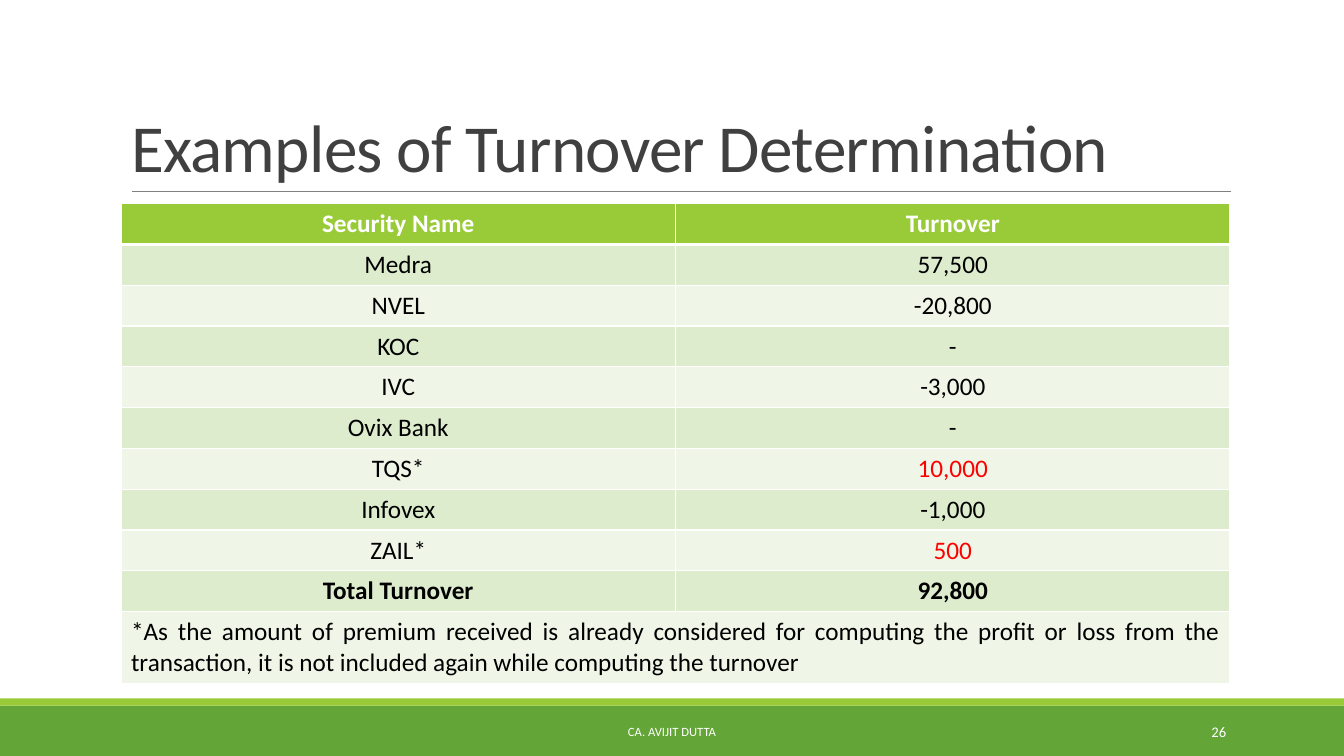
from lxml import etree
from pptx import Presentation
from pptx.dml.color import RGBColor
from pptx.enum.shapes import MSO_CONNECTOR, MSO_SHAPE
from pptx.enum.text import MSO_ANCHOR, MSO_AUTO_SIZE, PP_ALIGN
from pptx.oxml.ns import qn
from pptx.util import Inches, Pt

LEFT, CENTER, RIGHT, JUSTIFY = PP_ALIGN.LEFT, PP_ALIGN.CENTER, PP_ALIGN.RIGHT, PP_ALIGN.JUSTIFY
MIDDLE, BOTTOM = MSO_ANCHOR.MIDDLE, MSO_ANCHOR.BOTTOM
NO_AUTOFIT = MSO_AUTO_SIZE.NONE
RECTANGLE = MSO_SHAPE.RECTANGLE
STRAIGHT = MSO_CONNECTOR.STRAIGHT

GREEN = RGBColor(0x63, 0xA5, 0x37)
LIME = RGBColor(0x99, 0xCB, 0x38)
BAND_DARK = RGBColor(0xDE, 0xEC, 0xCE)
BAND_LIGHT = RGBColor(0xEF, 0xF6, 0xE8)
GRAY = RGBColor(0x80, 0x80, 0x80)
CHARCOAL = RGBColor(0x40, 0x40, 0x40)
WHITE = RGBColor(0xFF, 0xFF, 0xFF)
BLACK = RGBColor(0, 0, 0)
RED = RGBColor(0xFF, 0, 0)

FONT = "Calibri"
SLIDE_WIDTH = 13.33
ROW_HEIGHT, NOTE_HEIGHT = 0.405, 0.71

TURNOVERS = [
    ("Security Name", "Turnover"),
    ("Medra", "57,500"),
    ("NVEL", "-20,800"),
    ("KOC", "-"),
    ("IVC", "-3,000"),
    ("Ovix Bank", "-"),
    ("TQS*", "10,000"),
    ("Infovex", "-1,000"),
    ("ZAIL*", "500"),
    ("Total Turnover", "92,800"),
]
NOTE = (
    "*As the amount of premium received is already considered for computing the profit "
    "or loss from the transaction, it is not included again while computing the turnover"
)


def write(frame, text, size, color, align, bold=False):
    frame.word_wrap = True
    para = frame.paragraphs[0]
    para.text = text
    para.alignment = align
    font = para.runs[0].font
    font.name, font.size, font.bold = FONT, Pt(size), bold
    font.color.rgb = color
    return para


def add_band(slide, top, height, color):
    band = slide.shapes.add_shape(
        RECTANGLE, 0, Inches(top), Inches(SLIDE_WIDTH), Inches(height))
    band.shadow.inherit = False
    band.fill.solid()
    band.fill.fore_color.rgb = color
    band.line.fill.background()


def add_title_rule(slide):
    rule = slide.shapes.add_connector(
        STRAIGHT, Inches(1.31), Inches(1.9), Inches(12.21), Inches(1.9))
    rule.line.color.rgb = GRAY
    rule.line.width = Pt(0.5)
    etree.SubElement(rule._element.spPr, qn("a:effectLst"))


def format_title(title, text):
    title.left, title.top = Inches(1.2), Inches(0.31)
    title.width, title.height = Inches(11), Inches(1.59)
    frame = title.text_frame
    frame.auto_size = NO_AUTOFIT
    frame.vertical_anchor = BOTTOM
    para = write(frame, text, 48, CHARCOAL, LEFT)
    para.line_spacing = 0.85
    para.runs[0].font._element.set("spc", "-50")


def add_footer_text(slide, text, left, width, size, align):
    box = slide.shapes.add_textbox(Inches(left), Inches(7.06), Inches(width), Inches(0.4))
    box.text_frame.vertical_anchor = MIDDLE
    write(box.text_frame, text, size, WHITE, align)


def set_borders(cell, top=1, bottom=1):
    """Draw white cell edges with the given widths in points."""
    properties = cell._tc.get_or_add_tcPr()
    for edge, width in (("lnL", 1), ("lnR", 1), ("lnT", top), ("lnB", bottom)):
        line = etree.SubElement(properties, qn(f"a:{edge}"), w=str(Pt(width)))
        fill = etree.SubElement(line, qn("a:solidFill"))
        etree.SubElement(fill, qn("a:srgbClr"), val=str(WHITE))


def fill_cell(cell, color):
    cell.fill.solid()
    cell.fill.fore_color.rgb = color


def add_turnover_table(slide):
    note_row = len(TURNOVERS)
    total_row = note_row - 1
    table = slide.shapes.add_table(
        note_row + 1, 2, Inches(1.2), Inches(2.02), Inches(11),
        Inches(ROW_HEIGHT * note_row + NOTE_HEIGHT)).table
    for column in table.columns:
        column.width = Inches(5.5)
    for index, row in enumerate(table.rows):
        row.height = Inches(NOTE_HEIGHT if index == note_row else ROW_HEIGHT)
        band = LIME if index == 0 else BAND_DARK if index % 2 else BAND_LIGHT
        for cell in row.cells:
            set_borders(cell, top=3 if index == 1 else 1, bottom=3 if index == 0 else 1)
            fill_cell(cell, band)

    for index, (name, turnover) in enumerate(TURNOVERS):
        bold = index in (0, total_row)
        color = WHITE if index == 0 else BLACK
        turnover_color = RED if name.endswith("*") else color
        write(table.cell(index, 0).text_frame, name, 18, color, CENTER, bold)
        write(table.cell(index, 1).text_frame, turnover, 18, turnover_color, CENTER, bold)

    note = table.cell(note_row, 0)
    note.merge(table.cell(note_row, 1))
    write(note.text_frame, NOTE, 18, BLACK, JUSTIFY)


def main():
    deck = Presentation()
    deck.slide_width, deck.slide_height = Inches(SLIDE_WIDTH), Inches(7.5)
    slide = deck.slides.add_slide(deck.slide_layouts.get_by_name("Title Only"))
    add_band(slide, 7, 0.5, GREEN)
    add_band(slide, 6.93, 0.07, LIME)
    add_title_rule(slide)
    format_title(slide.shapes.title, "Examples of Turnover Determination")
    add_footer_text(slide, "CA. AVIJIT DUTTA", 4.03, 5.27, 9, CENTER)
    add_footer_text(slide, "26", 10.83, 1.43, 10.5, RIGHT)
    add_turnover_table(slide)
    deck.save("out.pptx")


if __name__ == "__main__":
    main()
